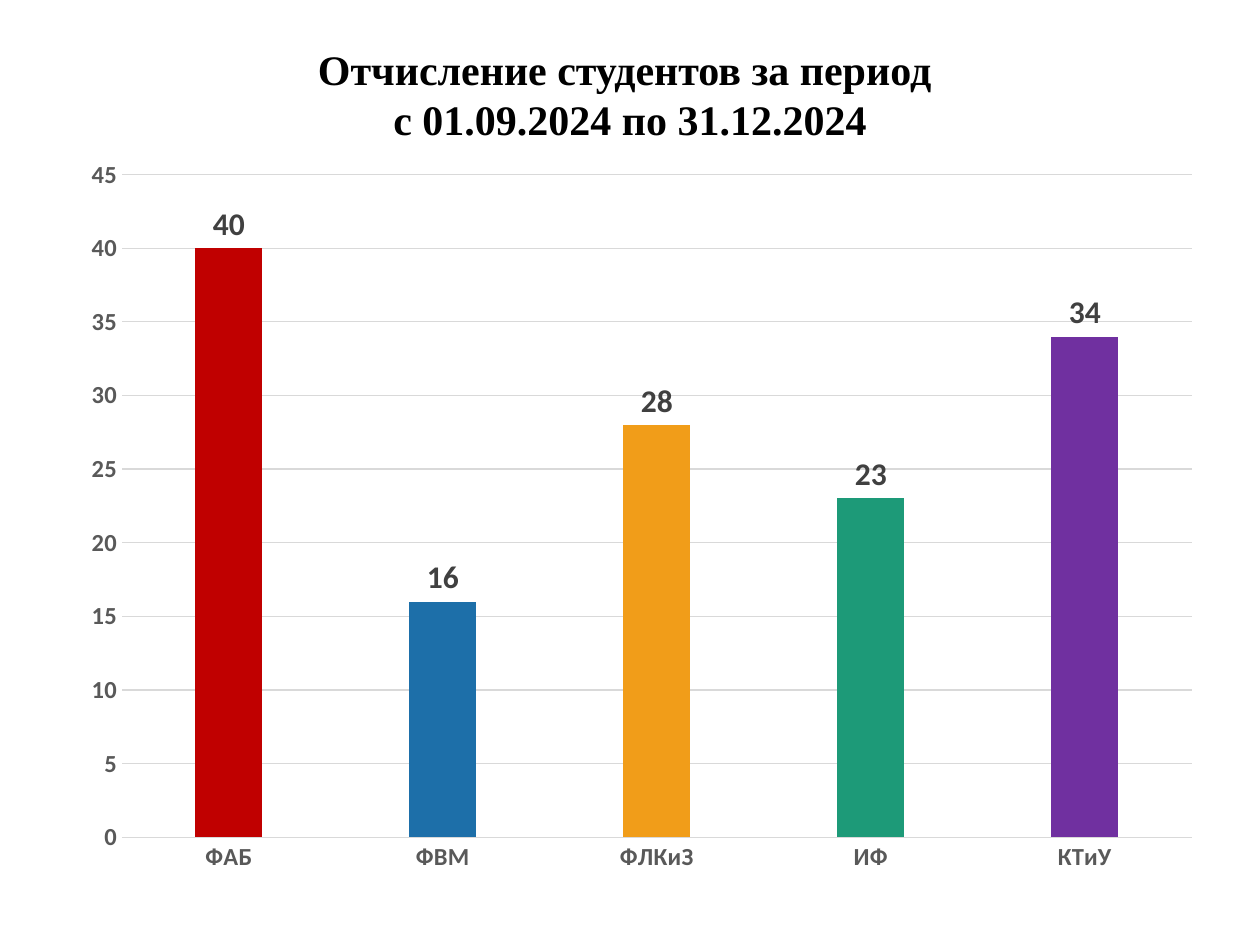
from lxml import etree
from pptx import Presentation
from pptx.chart.data import CategoryChartData
from pptx.dml.color import RGBColor
from pptx.enum.chart import XL_CHART_TYPE, XL_LABEL_POSITION, XL_TICK_MARK
from pptx.enum.text import MSO_ANCHOR, MSO_AUTO_SIZE, PP_ALIGN
from pptx.oxml.ns import qn
from pptx.util import Cm, Pt

COLUMNS = XL_CHART_TYPE.COLUMN_CLUSTERED
OUTSIDE_END = XL_LABEL_POSITION.OUTSIDE_END
NO_TICK = XL_TICK_MARK.NONE
TOP = MSO_ANCHOR.TOP
NO_AUTOFIT = MSO_AUTO_SIZE.NONE
CENTER = PP_ALIGN.CENTER

TITLE_ONLY = 5
GRAY = "D9D9D9"
TITLE_LINES = ["Отчисление студентов за период ", "с 01.09.2024 по 31.12.2024"]
FACULTIES = [
    ("ФАБ", 40, "C00000"),
    ("ФВМ", 16, "1D6FA9"),
    ("ФЛКиЗ", 28, "F19D19"),
    ("ИФ", 23, "1D9A78"),
    ("КТиУ", 34, "7030A0"),
]
# Plot area as fractions of the chart box
PLOT_LAYOUT = {"x": 0.05, "y": 0.04, "w": 0.93, "h": 0.89}


def rgb(value):
    return RGBColor.from_string(value)


def format_font(font, size, color, name="Calibri", bold=True):
    font.size = Pt(size)
    font.name = name
    font.bold = bold
    font.color.rgb = rgb(color)


def write_text(text_frame, lines, alignment=CENTER, **font_format):
    for index, line in enumerate(lines):
        paragraph = text_frame.paragraphs[0] if index == 0 else text_frame.add_paragraph()
        paragraph.alignment = alignment
        run = paragraph.add_run()
        run.text = line
        format_font(run.font, **font_format)


def format_line(line, color):
    line.color.rgb = rgb(color)
    line.width = Pt(0.75)


def set_plot_layout(chart, fractions):
    """Fix the inner plot area, without the axis labels."""
    plot_area = chart.element.find(".//" + qn("c:plotArea"))
    for existing in plot_area.findall(qn("c:layout")):
        plot_area.remove(existing)
    layout = etree.Element(qn("c:layout"))
    manual = etree.SubElement(layout, qn("c:manualLayout"))
    settings = {"layoutTarget": "inner", "xMode": "edge", "yMode": "edge", **fractions}
    for tag, value in settings.items():
        etree.SubElement(manual, qn("c:" + tag)).set("val", str(value))
    plot_area.insert(0, layout)


def place_title(slide, left, top, width, height):
    title = slide.shapes.title
    title.left, title.top, title.width, title.height = left, top, width, height
    text_frame = title.text_frame
    text_frame.word_wrap = True
    text_frame.auto_size = NO_AUTOFIT
    text_frame.vertical_anchor = TOP
    write_text(text_frame, TITLE_LINES, size=24, color="000000", name="Times New Roman")


def format_axes(chart):
    for axis in (chart.category_axis, chart.value_axis):
        axis.major_tick_mark = axis.minor_tick_mark = NO_TICK
        format_font(axis.tick_labels.font, size=14, color="595959")
    chart.category_axis.has_major_gridlines = False
    format_line(chart.category_axis.format.line, GRAY)

    value_axis = chart.value_axis
    value_axis.minimum_scale, value_axis.maximum_scale = 0, 45
    value_axis.major_unit = 5
    value_axis.format.line.fill.background()
    value_axis.has_major_gridlines = True
    format_line(value_axis.major_gridlines.format.line, GRAY)


def place_chart(slide, left, top, width, height):
    names, counts, colors = zip(*FACULTIES)
    chart_data = CategoryChartData()
    chart_data.categories = names
    chart_data.add_series("Series 1", counts)
    chart = slide.shapes.add_chart(COLUMNS, left, top, width, height, chart_data).chart
    chart.has_legend = False
    chart.has_title = False
    format_font(chart.font, size=14, color="000000")
    set_plot_layout(chart, PLOT_LAYOUT)
    format_axes(chart)

    plot = chart.plots[0]
    plot.gap_width = 219
    plot.overlap = -27
    plot.vary_by_categories = False
    plot.has_data_labels = True
    plot.data_labels.show_value = True
    plot.data_labels.position = OUTSIDE_END
    format_font(plot.data_labels.font, size=18, color="404040")
    for index, color in enumerate(colors):
        fill = plot.series[0].points[index].format.fill
        fill.solid()
        fill.fore_color.rgb = rgb(color)


def main():
    presentation = Presentation()
    presentation.slide_width, presentation.slide_height = Cm(25.4), Cm(19.05)
    slide = presentation.slides.add_slide(presentation.slide_layouts[TITLE_ONLY])
    place_title(slide, Cm(1.7), Cm(0.74), Cm(22), Cm(1.47))
    place_chart(slide, Cm(1.3), Cm(2.92), Cm(23.19), Cm(15.01))
    presentation.save("out.pptx")


if __name__ == "__main__":
    main()
